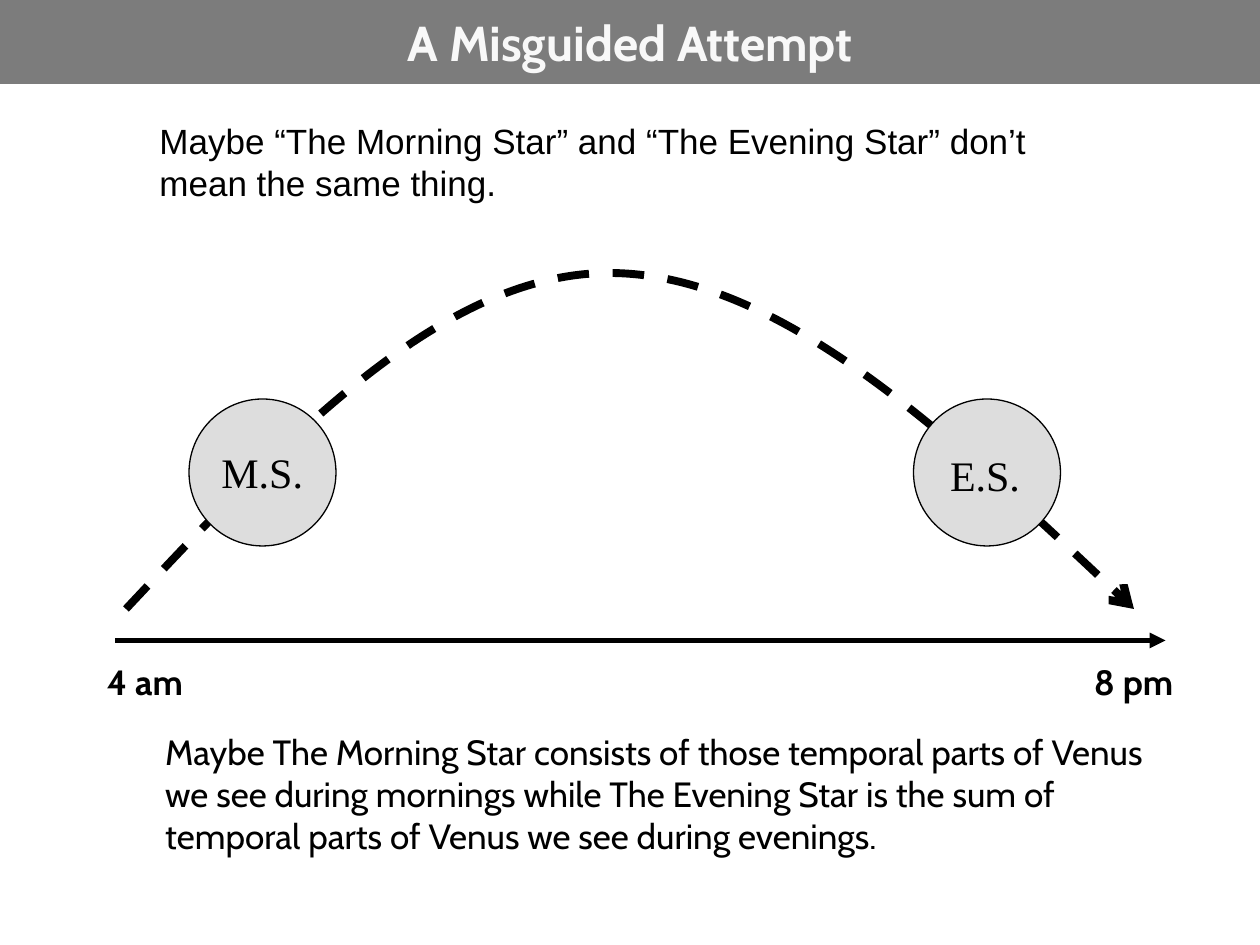
from lxml import etree
from pptx import Presentation
from pptx import util as u
from pptx.dml.color import RGBColor
from pptx.enum import dml, shapes, text
from pptx.oxml.ns import qn

SCALE = 7620  # EMU per px, 120 px to the inch
BLACK = "000000"


def px(*lengths):
    return [u.Emu(length * SCALE) for length in lengths]


def color(value):
    return RGBColor.from_string(value)


def format_text(shape, content, size, font, fill=BLACK, bold=False):
    shape.text_frame.text = content
    paragraph = shape.text_frame.paragraphs[0]
    run_font = paragraph.runs[0].font
    run_font.size, run_font.name, run_font.bold = u.Pt(size), font, bold
    run_font.color.rgb = color(fill)
    return paragraph


def add_text(slide, box, content, size, font, bold=False, wrap=False):
    shape = slide.shapes.add_textbox(*px(*box))
    shape.text_frame.word_wrap = wrap
    return format_text(shape, content, size, font, bold=bold)


def style_line(shape, width, arrowhead=None):
    shape.line.color.rgb = color(BLACK)
    shape.line.width = u.Pt(width)
    if arrowhead:
        line = shape.line._get_or_add_ln()
        etree.SubElement(line, qn("a:tailEnd"), type=arrowhead)


def add_title(slide, box, content):
    title = slide.shapes.title
    title.left, title.top, title.width, title.height = px(*box)
    title.fill.solid()
    title.fill.fore_color.rgb = color("7C7C7C")
    title.text_frame.vertical_anchor = text.MSO_ANCHOR.MIDDLE
    title.text_frame.auto_size = text.MSO_AUTO_SIZE.NONE
    paragraph = format_text(title, content, 28, "Cabin", "F8F8F8", True)
    paragraph.alignment = text.PP_ALIGN.CENTER


def add_body(slide, box, content):
    paragraph = add_text(slide, box, content, 20, "Cabin", wrap=True)
    paragraph.space_before = u.Pt(4)
    paragraph._p.get_or_add_pPr().set("marL", str(u.Inches(0.38)))


def add_arc(slide, box):
    """Dashed path across the sky, made of two Bézier curves."""
    left, top, width, height = box
    peak = 460
    curves = [
        [(150, 160), (300, 0), (peak, 0)],
        [(620, 0), (790, 160), (width, height)],
    ]
    builder = slide.shapes.build_freeform(*px(left, top + height))
    builder.add_line_segments(
        [px(left + curve[-1][0], top + curve[-1][1]) for curve in curves], close=False)
    arc = builder.convert_to_shape()
    arc.shadow.inherit = False
    arc.fill.background()

    # Bend the straight segments
    for segment, curve in zip(list(arc._element.iter(qn("a:lnTo"))), curves):
        bezier = etree.Element(qn("a:cubicBezTo"))
        for x, y in curve:
            etree.SubElement(bezier, qn("a:pt"), x=str(x * SCALE), y=str(y * SCALE))
        segment.getparent().replace(segment, bezier)

    arc.line.dash_style = dml.MSO_LINE.DASH
    style_line(arc, 4.5, "arrow")


def add_star(slide, box, label, label_box):
    left, top, _, _ = box
    star = slide.shapes.add_shape(shapes.MSO_SHAPE.OVAL, *px(*box))
    star.shadow.inherit = False
    star.fill.solid()
    star.fill.fore_color.rgb = color("DDDDDD")
    style_line(star, 0.75)
    x, y, width, height = label_box
    add_text(slide, (left + x, top + y, width, height), label, 24, "Times New Roman")


def add_timeline(slide, box):
    left, top, width, _ = box
    axis = slide.shapes.add_connector(
        shapes.MSO_CONNECTOR.STRAIGHT, *px(left, top, left + width, top))
    style_line(axis, 3, "triangle")
    etree.SubElement(axis._element.spPr, qn("a:effectLst"))
    for x, label in ((-20, "4 am"), (920, "8 pm")):
        add_text(slide, (left + x, top + 13, 108, 53), label, 20, "Cabin", bold=True)


def main():
    presentation = Presentation()
    presentation.slide_width, presentation.slide_height = px(1200, 900)
    slide = presentation.slides.add_slide(presentation.slide_layouts[5])

    add_title(slide, (0, 0, 1200, 80), "A Misguided Attempt")
    add_body(slide, (100, 690, 1020, 170),
             "Maybe The Morning Star consists of those temporal parts of Venus we see "
             "during mornings while The Evening Star is the sum of temporal parts of "
             "Venus we see during evenings.")

    # Diagram
    add_arc(slide, (120, 260, 960, 320))
    add_star(slide, (180, 380, 140, 140), "M.S.", (19, 39, 102, 60))
    add_star(slide, (870, 380, 140, 140), "E.S.", (23, 42, 91, 60))
    add_timeline(slide, (110, 610, 1000, 66))

    # Opening claim
    add_text(slide, (140, 108, 920, 92),
             "Maybe “The Morning Star” and “The Evening Star” don’t mean the same thing.",
             20, "Arial", wrap=True)
    presentation.save("out.pptx")


if __name__ == "__main__":
    main()
